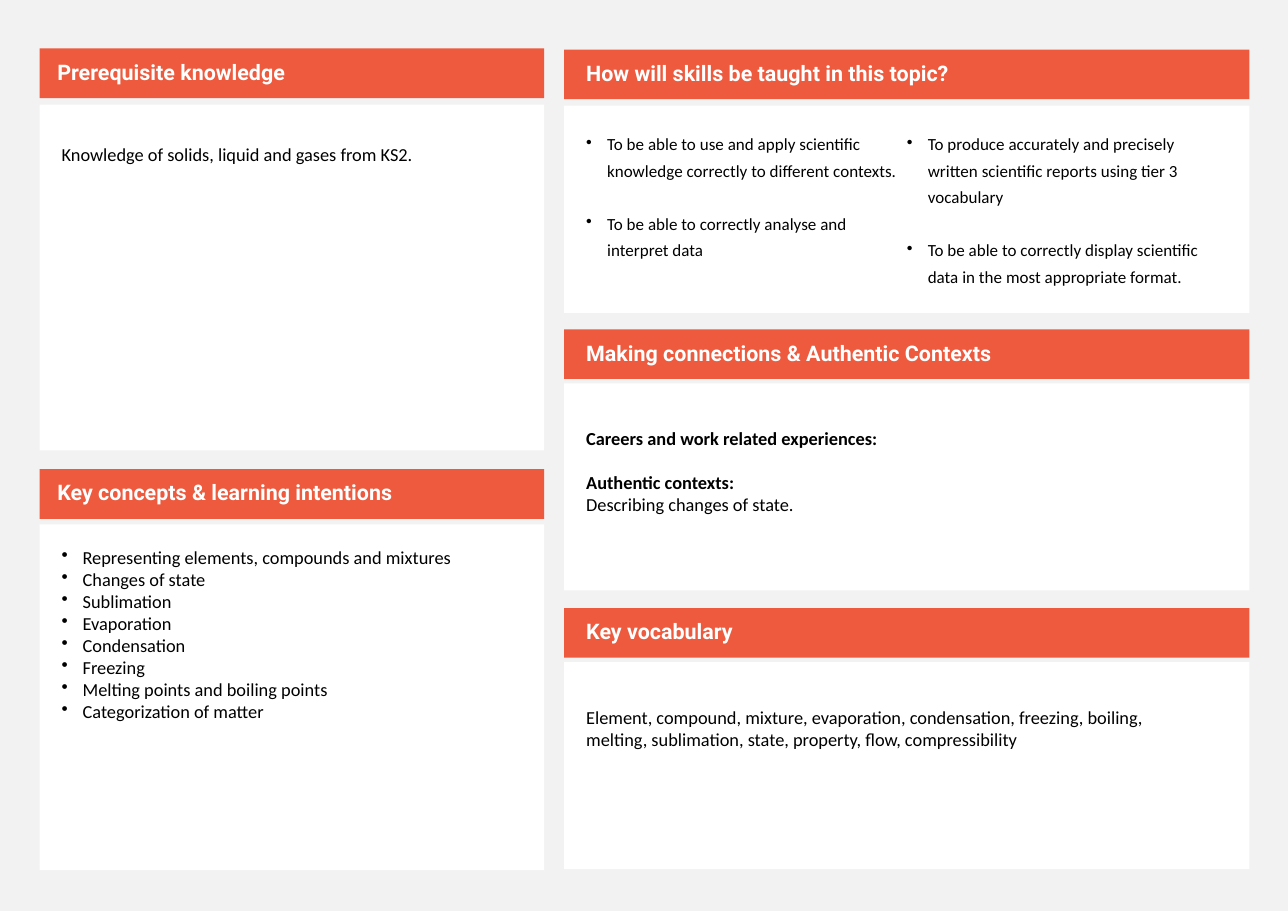
from dataclasses import dataclass

from lxml.etree import SubElement
from pptx import Presentation
from pptx.dml.color import RGBColor
from pptx.enum.shapes import MSO_SHAPE as Shape
from pptx.enum.text import MSO_ANCHOR as Anchor, PP_ALIGN as Align
from pptx.oxml.ns import qn
from pptx.util import Inches, Pt

COLORS = {"back": "F2F2F2", "head": "ED5A3E", "body": "FFFFFF",
          "title": "FFFFFF", "text": "000000"}
INDENT = 0.19
HEAD_HIGH = 0.45


@dataclass
class Line:
    text: str
    bold: bool = False
    before: float = 0
    after: float = 0


@dataclass
class Column:
    left: float
    width: float
    high: float
    pad: float


@dataclass
class Panel:
    column: Column
    top: float
    body_top: float
    title: str
    lines: list[Line]
    inset: float = 0.2
    right: float = 0.2
    size: float = 12
    space: float = 1
    bullet: bool = False
    count: int = 1


LEFT = Column(0.36, 4.58, 3.14, 0.16)
RIGHT = Column(5.12, 6.22, 1.88, 0.2)

CONCEPTS = ["Representing elements, compounds and mixtures", "Changes of state",
            "Sublimation", "Evaporation", "Condensation", "Freezing",
            "Melting points and boiling points", "Categorization of matter"]
SKILLS = ["To be able to use and apply scientific knowledge correctly to different contexts.",
          "To be able to correctly analyse and interpret data",
          "To produce accurately and precisely written scientific reports using tier 3 vocabulary",
          "To be able to correctly display scientific data in the most appropriate format."]

PANELS = [
    Panel(LEFT, 0.44, 0.95, "Prerequisite knowledge",
          [Line("Knowledge of solids, liquid and gases from KS2.")], inset=0.35),
    Panel(LEFT, 4.26, 4.76, "Key concepts & learning intentions",
          [Line(text) for text in CONCEPTS], bullet=True),
    Panel(RIGHT, 0.45, 0.96, "How will skills be taught in this topic?",
          [Line(text, after=17.3) for text in SKILLS[:-1]] + [Line(SKILLS[-1])],
          size=11.1, space=1.3, bullet=True, count=2),
    Panel(RIGHT, 2.99, 3.48, "Making connections & Authentic Contexts",
          [Line("Careers and work related experiences:", bold=True),
           Line("Authentic contexts:", bold=True, before=14.4),
           Line("Describing changes of state.")], inset=0.4),
    Panel(RIGHT, 5.52, 6.01, "Key vocabulary",
          [Line("Element, compound, mixture, evaporation, condensation, freezing, boiling, "
                "melting, sublimation, state, property, flow, compressibility")],
          inset=0.4, right=0.5),
]


def paint(fill, color: str) -> None:
    fill.solid()
    fill.fore_color.rgb = RGBColor.from_string(COLORS[color])


def add_box(slide, column: Column, top: float, high: float, color: str, pads: tuple):
    """Draw a plain rectangle; pads are its left, top, right and bottom insets."""
    box = slide.shapes.add_shape(Shape.RECTANGLE, Inches(column.left), Inches(top),
                                 Inches(column.width), Inches(high))
    box.shadow.inherit = False
    paint(box.fill, color)
    box.line.fill.background()
    frame = box.text_frame
    frame.word_wrap = True
    (frame.margin_left, frame.margin_top,
     frame.margin_right, frame.margin_bottom) = map(Inches, pads)
    return frame


def write(para, text: str, face: str, size: float, bold: bool, color: str) -> None:
    para.text = text
    para.alignment = Align.LEFT
    font = para.font
    font.name, font.size, font.bold = face, Pt(size), bold
    font.color.rgb = RGBColor.from_string(COLORS[color])


def add_bullet(para) -> None:
    props = para._p.get_or_add_pPr()
    props.set("marL", str(Inches(INDENT)))
    props.set("indent", str(-Inches(INDENT)))
    mark = SubElement(props, qn("a:buChar"))
    mark.set("char", "•")
    props.insert_element_before(mark, "a:tabLst", "a:defRPr", "a:extLst")


def add_panel(slide, panel: Panel) -> None:
    column = panel.column
    body = add_box(slide, column, panel.body_top, column.high, "body",
                   (0.2, panel.inset, panel.right, 0.2))
    body.vertical_anchor = Anchor.TOP
    if panel.count > 1:
        body._txBody.bodyPr.set("numCol", str(panel.count))
    for i, line in enumerate(panel.lines):
        para = body.add_paragraph() if i else body.paragraphs[0]
        write(para, line.text, "Calibri", panel.size, line.bold, "text")
        para.line_spacing = panel.space
        para.space_before, para.space_after = Pt(line.before), Pt(line.after)
        if panel.bullet:
            add_bullet(para)

    head = add_box(slide, column, panel.top, HEAD_HIGH, "head",
                   (column.pad, 0.05, 0.1, 0.05))
    head.vertical_anchor = Anchor.MIDDLE
    write(head.paragraphs[0], panel.title, "Roboto", 14, True, "title")
    head.paragraphs[0].line_spacing = 0.9


def main() -> None:
    deck = Presentation()
    deck.slide_width, deck.slide_height = Inches(11.69), Inches(8.27)
    slide = deck.slides.add_slide(deck.slide_layouts[6])
    paint(slide.background.fill, "back")
    for panel in PANELS:
        add_panel(slide, panel)
    deck.save("out.pptx")


if __name__ == "__main__":
    main()
